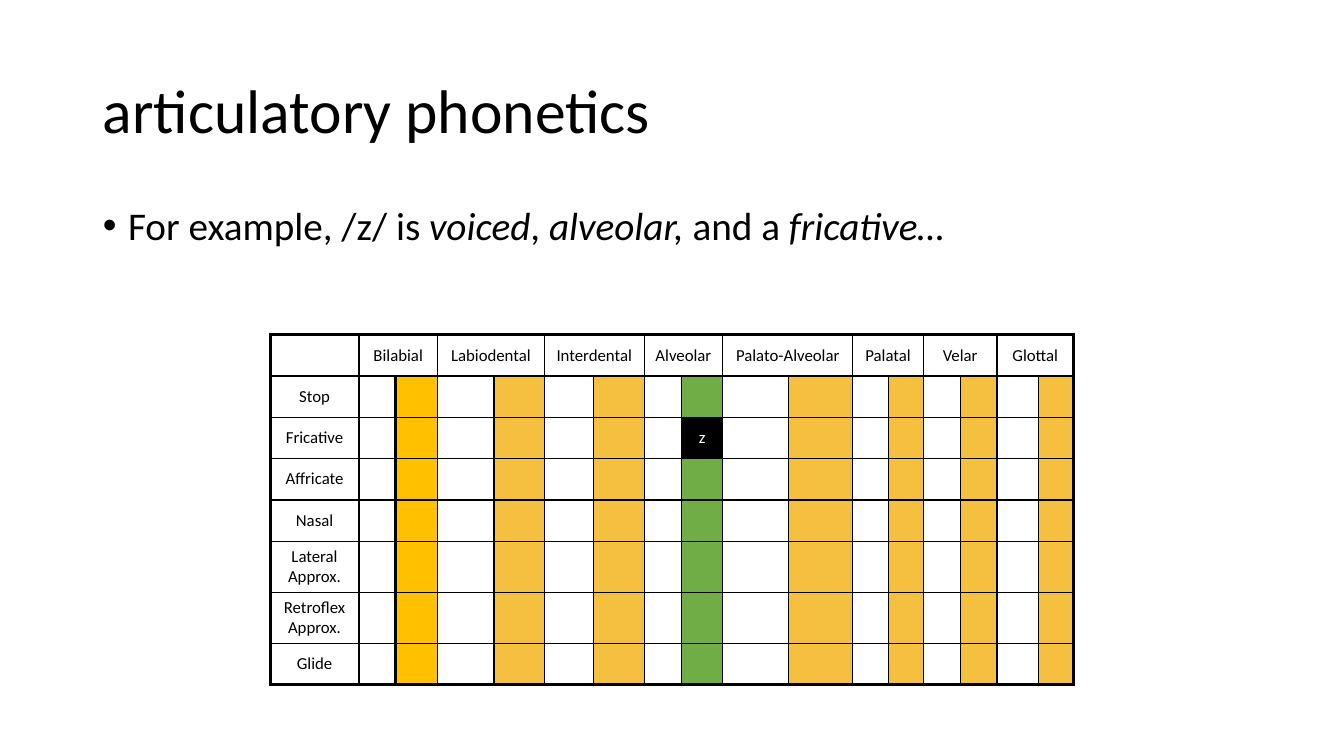
"""Build the articulatory phonetics slide with its consonant chart."""
from lxml import etree
from pptx import Presentation
from pptx.dml.color import RGBColor
from pptx.enum.text import MSO_ANCHOR, MSO_AUTO_SIZE, PP_ALIGN
from pptx.oxml.ns import qn
from pptx.util import Inches, Pt

MIDDLE, CENTER, LEFT = MSO_ANCHOR.MIDDLE, PP_ALIGN.CENTER, PP_ALIGN.LEFT
NO_FIT = MSO_AUTO_SIZE.NONE

TITLE = "articulatory phonetics"
SENTENCE = [
    ("For example, /z/ is ", False), ("voiced", True), (", ", False),
    ("alveolar, ", True), ("and a ", False), ("fricative…", True),
]
PLACES = ["Bilabial", "Labiodental", "Interdental", "Alveolar",
          "Palato-Alveolar", "Palatal", "Velar", "Glottal"]
MANNERS = ["Stop", "Fricative", "Affricate", "Nasal",
           "Lateral Approx.", "Retroflex Approx.", "Glide"]
SOUND = {"text": "z", "place": "Alveolar", "manner": "Fricative"}

COLORS = {"black": "000000", "white": "FFFFFF", "voiced": "F5C040",
          "Bilabial": "FFC000", "Alveolar": "70AD47"}
FONT = "Calibri"
TITLE_BOX = (0.92, 0.4, 11.5, 1.45)
BODY_BOX = (0.92, 2, 11.5, 4.76)
CHART_LEFT, CHART_TOP, ROW_HEIGHT = 2.68, 3.32, 0.41
LABEL_WIDTH = 0.88
PLACE_WIDTHS = [(0.36, 0.42), (0.56, 0.5), (0.49, 0.5), (0.37, 0.41),
                (0.65, 0.64), (0.35, 0.35), (0.37, 0.36), (0.41, 0.35)]
THIN, THICK = 1, 2.25

WIDTHS = [LABEL_WIDTH] + [width for pair in PLACE_WIDTHS for width in pair]
ROW_COUNT, COLUMN_COUNT = len(MANNERS) + 1, len(WIDTHS)
THICK_ROWS = {0, 1, ROW_COUNT}
THICK_COLUMNS = {0, 1, 2, COLUMN_COUNT}


def add_span(para, text, size, color="black", italic=False):
    span = para.add_run()
    span.text = text
    span.font.name, span.font.size, span.font.italic = FONT, Pt(size), italic
    span.font.color.rgb = RGBColor.from_string(COLORS[color])


def place_text(holder, box, size, spans):
    holder.left, holder.top, holder.width, holder.height = map(Inches, box)
    holder.text_frame.auto_size = NO_FIT
    para = holder.text_frame.paragraphs[0]
    para.alignment, para.line_spacing = LEFT, 0.9
    for text, italic in spans:
        add_span(para, text, size, italic=italic)
    return para


def fill_cell(cell, text, fill, ink="black"):
    cell.fill.solid()
    cell.fill.fore_color.rgb = RGBColor.from_string(COLORS[fill])
    cell.vertical_anchor = MIDDLE
    if text:
        para = cell.text_frame.paragraphs[0]
        para.alignment = CENTER
        add_span(para, text, 12, ink)


def draw_borders(cell, row, column):
    first, last = column, column + 1
    if row == 0 and column > 0:
        first = column - (column - 1) % 2
        last = first + 2
    edges = [("a:lnL", first in THICK_COLUMNS), ("a:lnR", last in THICK_COLUMNS),
             ("a:lnT", row in THICK_ROWS), ("a:lnB", row + 1 in THICK_ROWS)]
    properties = cell._tc.get_or_add_tcPr()
    for position, (tag, thick) in enumerate(edges):
        line = etree.Element(qn(tag), w=str(Pt(THICK if thick else THIN)))
        paint = etree.SubElement(line, qn("a:solidFill"))
        etree.SubElement(paint, qn("a:srgbClr"), val=COLORS["black"])
        properties.insert(position, line)


def cell_content(row, column):
    """Return the text, fill and ink of a cell."""
    if column == 0:
        return (MANNERS[row - 1] if row else ""), "white", "black"
    index, voiced = divmod(column - 1, 2)
    place = PLACES[index]
    if row == 0:
        return ("" if voiced else place), "white", "black"
    if not voiced:
        return "", "white", "black"
    if (place, MANNERS[row - 1]) == (SOUND["place"], SOUND["manner"]):
        return SOUND["text"], "black", "white"
    return "", (place if place in COLORS else "voiced"), "black"


def add_chart_table(page):
    table = page.shapes.add_table(
        ROW_COUNT, COLUMN_COUNT, Inches(CHART_LEFT), Inches(CHART_TOP),
        Inches(sum(WIDTHS)), Inches(ROW_HEIGHT * ROW_COUNT)).table
    table.first_row = table.horz_banding = False
    for column, width in zip(table.columns, WIDTHS):
        column.width = Inches(width)
    for row in range(ROW_COUNT):
        table.rows[row].height = Inches(ROW_HEIGHT)
        for column in range(COLUMN_COUNT):
            cell = table.cell(row, column)
            fill_cell(cell, *cell_content(row, column))
            draw_borders(cell, row, column)
    for column in range(1, COLUMN_COUNT, 2):
        table.cell(0, column).merge(table.cell(0, column + 1))


def main():
    deck = Presentation()
    deck.slide_width, deck.slide_height = Inches(13.33), Inches(7.5)
    page = deck.slides.add_slide(deck.slide_layouts[1])
    title, body = page.placeholders
    place_text(title, TITLE_BOX, 44, [(TITLE, False)])
    title.text_frame.vertical_anchor = MIDDLE
    para = place_text(body, BODY_BOX, 28, SENTENCE)
    para.space_before = Pt(10)
    indent = Inches(0.25)
    properties = para._p.get_or_add_pPr()
    properties.set("marL", str(indent))
    properties.set("indent", str(-indent))
    add_chart_table(page)
    deck.save("out.pptx")


if __name__ == "__main__":
    main()
